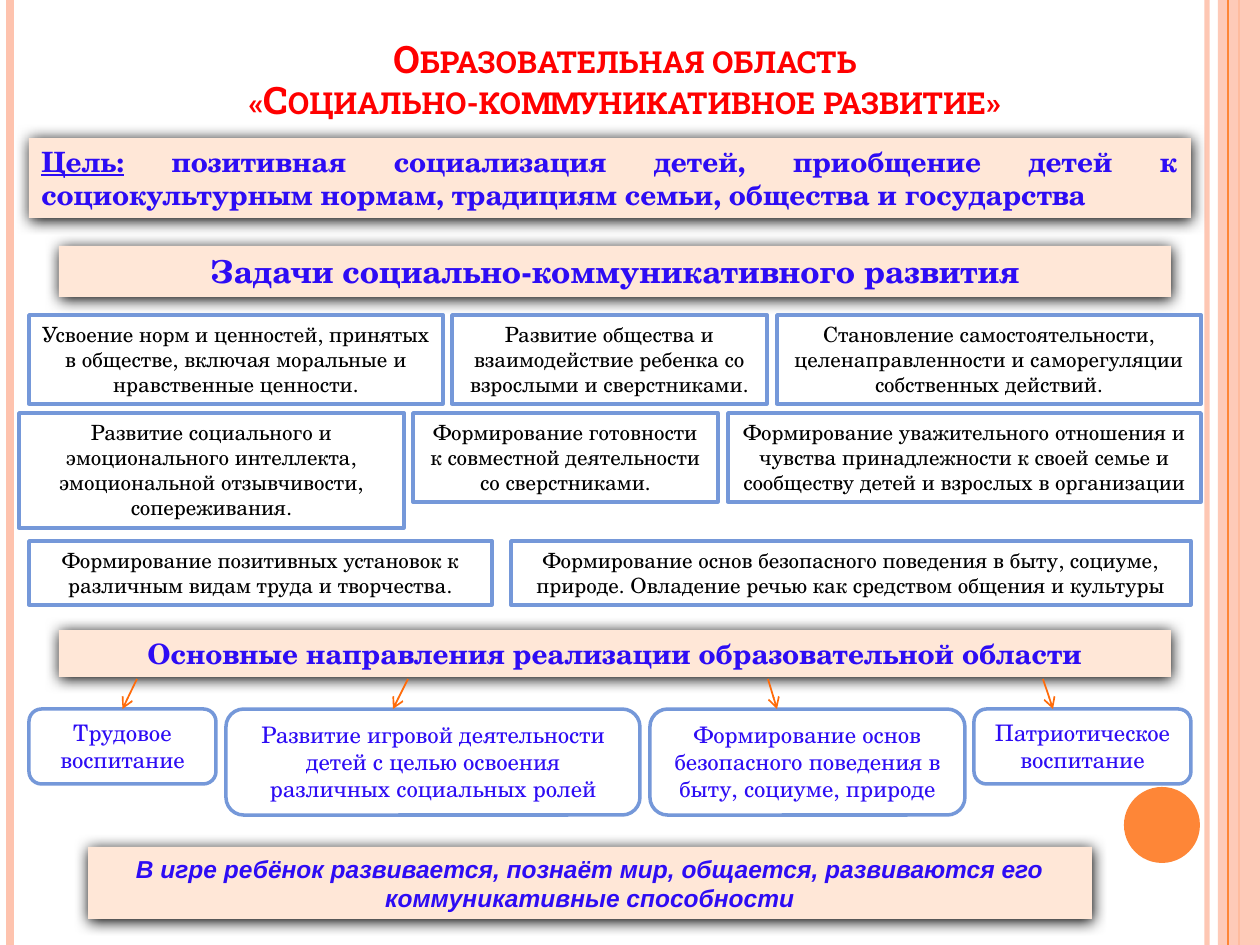
from lxml import etree
from pptx import Presentation
from pptx.dml.color import RGBColor
from pptx.enum.shapes import MSO_CONNECTOR as Connector, MSO_SHAPE as Shape
from pptx.enum.text import MSO_ANCHOR as Anchor, PP_ALIGN as Align
from pptx.oxml.ns import qn
from pptx.util import Emu, Pt

PX = 914400 / 126
SERIF, SLAB, SANS = "TeX Gyre Schola", "Roboto Slab", "Arial"
PEACH, ORANGE, PINK = "FFE7D7", "FE8637", "FEC3AE"
BLUE_TEXT, BLUE_LINE, ARROW = "2D0CF4", "7598D9", "FF6B0A"

# Each task: left, width, height, text; rows are keyed by their top
TASK_ROWS = {
    315: [
        (29, 414, 89, "Усвоение норм и ценностей, принятых в обществе, "
                      "включая моральные и нравственные ценности."),
        (452, 315, 89, "Развитие общества и взаимодействие ребенка "
                       "со взрослыми и сверстниками."),
        (777, 424, 89, "Становление самостоятельности, целенаправленности "
                       "и саморегуляции собственных действий."),
    ],
    413: [
        (19, 385, 115, "Развитие социального и эмоционального интеллекта, "
                       "эмоциональной отзывчивости, сопереживания."),
        (413, 305, 89, "Формирование готовности к совместной деятельности "
                       "со сверстниками."),
        (728, 473, 89, "Формирование уважительного отношения и чувства принадлежности "
                       "к своей семье и сообществу детей и взрослых в организации"),
    ],
    541: [
        (29, 463, 64, "Формирование позитивных установок к различным видам "
                      "труда и творчества."),
        (511, 680, 64, "Формирование основ безопасного поведения в быту, социуме, природе. "
                       "Овладение речью как средством общения и культуры"),
    ],
}

# Each direction: left, width, height, arrow start, arrow end, text
DIRECTIONS = [
    (29, 187, 75, 137, 123, "Трудовое воспитание"),
    (226, 414, 106, 408, 393, "Развитие игровой деятельности детей с целью освоения "
                              "различных социальных ролей"),
    (650, 315, 106, 768, 777, "Формирование основ безопасного поведения в быту, "
                              "социуме, природе"),
    (974, 217, 75, 1043, 1053, "Патриотическое воспитание"),
]


def px(*lengths):
    return [Emu(round(length * PX)) for length in lengths]


def color(hex_value):
    return RGBColor.from_string(hex_value)


def set_alpha(shape, percent):
    """Make the first solid colour of the shape partly transparent."""
    fill = next(shape._element.spPr.iter(qn("a:srgbClr")))
    etree.SubElement(fill, qn("a:alpha"), val=str(percent * 1000))


def add_panel(page, box, kind, fill, line=None):
    panel = page.shapes.add_shape(kind, *px(*box))
    panel.shadow.inherit = False
    panel.fill.solid()
    panel.fill.fore_color.rgb = color(fill)
    if line:
        panel.line.color.rgb = color(line)
        panel.line.width = Pt(2)
    else:
        panel.line.fill.background()
    return panel


def add_line(page, start, end, line, width):
    connector = page.shapes.add_connector(Connector.STRAIGHT, *px(*start, *end))
    connector.line.color.rgb = color(line)
    connector.line.width = Pt(width)
    etree.SubElement(connector._element.spPr, qn("a:effectLst"))
    return connector


def write(shape, text, size, ink, font=SERIF, bold=False, align=Align.CENTER,
          anchor=Anchor.TOP):
    frame = shape.text_frame
    frame.word_wrap = True
    frame.vertical_anchor = anchor
    para = frame.paragraphs[0]
    para.text = text
    para.alignment = align
    for span in para.runs:
        span.font.name = font
        span.font.size = Pt(size)
        span.font.bold = bold
        span.font.color.rgb = color(ink)
    return para


def add_banner(page, box, text, size, **style):
    """Add a peach heading strip with a dark shadow and bold text."""
    banner = add_panel(page, box, Shape.RECTANGLE, PEACH)
    effects = banner._element.spPr.find(qn("a:effectLst"))
    shadow = etree.SubElement(effects, qn("a:outerShdw"), blurRad=str(Pt(8.5)),
                              dist=str(Pt(1)), dir="5400000", rotWithShape="0")
    etree.SubElement(shadow, qn("a:srgbClr"), val="000000")
    return write(banner, text, size, BLUE_TEXT, bold=True, **style)


def add_frame(page, height):
    """Add the vertical stripes and the disc at the slide's edges."""
    rail = add_line(page, (1207, 0), (1207, height), PINK, 3)
    set_alpha(rail, 93)
    add_line(page, (10, 0), (10, height), PINK, 4.5)
    add_line(page, (1239, 0), (1239, height), ORANGE, 1.5)
    band = add_panel(page, (1218, 0, 42, height), Shape.RECTANGLE, PINK)
    set_alpha(band, 87)
    add_line(page, (1228, 0), (1228, height), ORANGE, 0.75)
    add_panel(page, (1124, 787, 76, 76), Shape.OVAL, ORANGE)


def add_title(page, box):
    title = page.shapes.add_textbox(*px(*box))
    para = write(title, "Образовательная область\v«Социально-коммуникативное развитие»",
                 21.6, "FF0000", SLAB, bold=True, anchor=Anchor.BOTTOM)
    para.line_spacing = 0.9
    for span in para.runs:
        span.font._element.set("cap", "small")


def add_goal(page, box):
    para = add_banner(page, box, "Цель:", 16, align=Align.JUSTIFY)
    label = para.runs[0]
    rest = para.add_run()
    rest.text = (" позитивная социализация детей, приобщение детей к социокультурным "
                 "нормам, традициям семьи, общества и государства")
    rest.font.name, rest.font.size, rest.font.bold = SERIF, Pt(16), True
    rest.font.color.rgb = color(BLUE_TEXT)
    label.font.underline = True


def add_tasks(page):
    for top, row in TASK_ROWS.items():
        for left, width, height, text in row:
            task = add_panel(page, (left, top, width, height), Shape.RECTANGLE,
                             "FFFFFF", BLUE_LINE)
            write(task, text, 12, "000000")


def add_directions(page, arrow_top, top):
    for left, width, height, start, end, text in DIRECTIONS:
        direction = add_panel(page, (left, top, width, height), Shape.ROUNDED_RECTANGLE,
                              "FFFFFF", BLUE_LINE)
        write(direction, text, 13, BLUE_TEXT)
        arrow = add_line(page, (start, arrow_top), (end, top), ARROW, 1)
        etree.SubElement(arrow.line._get_or_add_ln(), qn("a:tailEnd"), type="arrow")
        if abs(left + width / 2 - end) < 1:
            arrow.end_connect(direction, 0)


def main():
    deck = Presentation()
    deck.slide_width, deck.slide_height = px(1260, 945)
    page = deck.slides.add_slide(deck.slide_layouts[6])
    add_frame(page, 945)
    add_title(page, (128, 29, 994, 100))
    add_goal(page, (29, 138, 1162, 80))
    add_banner(page, (59, 246, 1112, 51), "Задачи социально-коммуникативного развития", 18)
    add_tasks(page)
    add_banner(page, (59, 630, 1112, 47),
               "Основные направления реализации образовательной области", 16)
    add_directions(page, 679, 709)
    motto = add_banner(page, (88, 847, 1004, 72),
                       "В игре ребёнок развивается, познаёт мир, общается, "
                       "развиваются его коммуникативные способности",
                       14, font=SANS, anchor=Anchor.MIDDLE)
    motto.runs[0].font.italic = True
    deck.save("out.pptx")


if __name__ == "__main__":
    main()
